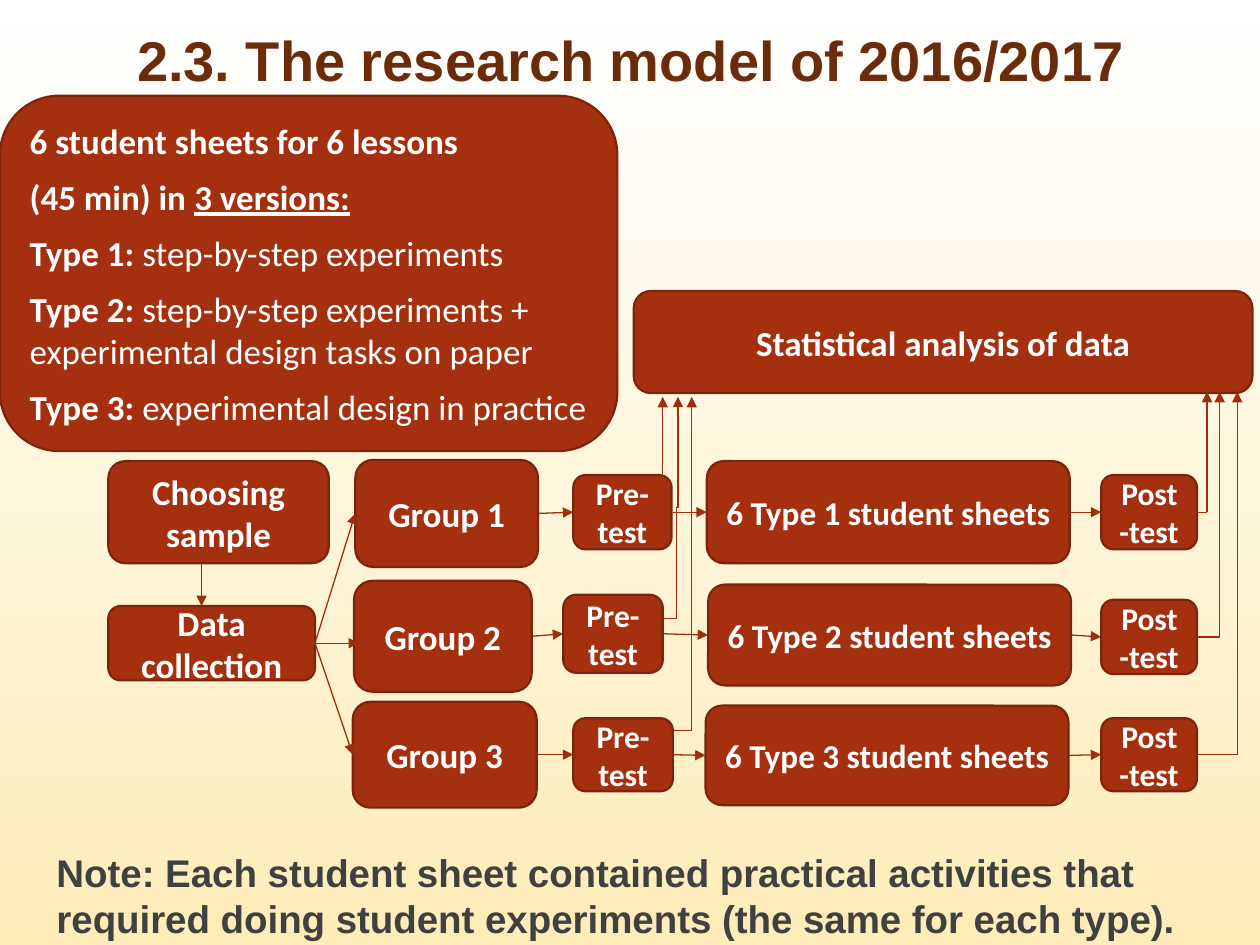
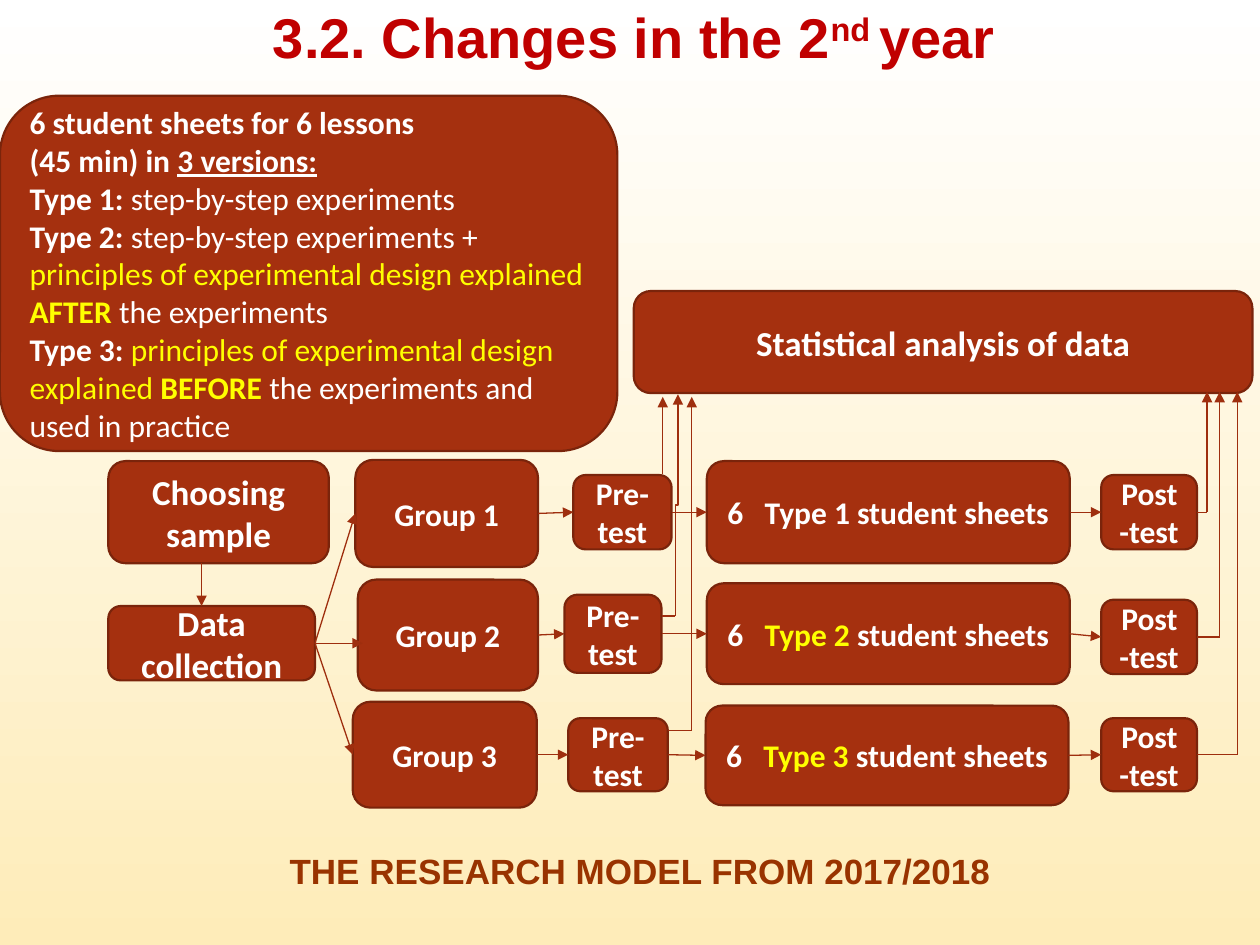
from dataclasses import dataclass

from pptx import Presentation
from pptx import util as u
from pptx.dml.color import RGBColor
from pptx.enum import shapes, text
from pptx.oxml import ns
from lxml import etree

COLOURS = {
    "sky": "FFFFFF", "sand": "FEECB9",
    "brick": "A5300F", "edge": "7A240B", "arrow": "9E2E0E",
    "white": "FFFFFF", "yellow": "FFFF00",
    "brown": "6A2C0B", "red": "C00000", "grey": "404040", "rust": "993300",
}
BOLD, PLAIN = {"bold": True}, {"bold": False}
YELLOW = {"colour": "yellow"}
LEFT, CENTRE = text.PP_ALIGN.LEFT, text.PP_ALIGN.CENTER


@dataclass
class Box:
    left: float
    top: float
    width: float
    height: float

    @property
    def right(self):
        return self.left + self.width

    @property
    def bottom(self):
        return self.top + self.height

    @property
    def middle(self):
        return self.top + self.height / 2

    def inside(self, left, top, width, height):
        return Box(self.left + left, self.top + top, width, height)

    def point(self, x, y):
        return self.left + x, self.top + y

    def inches(self):
        return [u.Inches(n) for n in (self.left, self.top, self.width, self.height)]


SUMMARY = Box(0, 0.76, 4.9, 2.82)
FLOW = Box(0.8, 2.3, 9.2, 4.2)


def rgb(name):
    return RGBColor.from_string(COLOURS[name])


def write(frame, paras, size, colour="white", font="Calibri", bold=True,
          align=LEFT, after=0):
    """Fill a frame; each para is a string or a list of (text, format) spans."""
    frame.word_wrap = True
    for number, spans in enumerate(paras):
        para = frame.paragraphs[0] if number == 0 else frame.add_paragraph()
        para.alignment = align
        para.space_after = u.Pt(after)
        for words, style in [(spans, {})] if isinstance(spans, str) else spans:
            span = para.add_run()
            span.text = words
            span.font.size = u.Pt(size)
            span.font.name = font
            span.font.bold = style.get("bold", bold)
            span.font.underline = style.get("underline", False)
            span.font.color.rgb = rgb(style.get("colour", colour))
            for name in ("baseline", "spc"):
                if name in style:
                    span._r.get_or_add_rPr().set(name, str(style[name]))


def add_text(page, box, paras, **style):
    frame = page.shapes.add_textbox(*box.inches()).text_frame
    write(frame, paras, font="Arial", **style)


def add_panel(page, box, paras, **style):
    panel = page.shapes.add_shape(shapes.MSO_SHAPE.ROUNDED_RECTANGLE, *box.inches())
    panel.shadow.inherit = False
    panel.fill.solid()
    panel.fill.fore_color.rgb = rgb("brick")
    panel.line.color.rgb = rgb("edge")
    panel.line.width = u.Pt(1.25)
    panel.text_frame.vertical_anchor = text.MSO_ANCHOR.MIDDLE
    write(panel.text_frame, paras, **style)


def add_line(page, start, end, head=True, kind=shapes.MSO_CONNECTOR.STRAIGHT):
    line = page.shapes.add_connector(kind, *[u.Inches(n) for n in (*start, *end)])
    line.line.color.rgb = rgb("arrow")
    line.line.width = u.Pt(0.75)
    if head:
        etree.SubElement(line.line._get_or_add_ln(), ns.qn("a:tailEnd"), type="triangle")
    etree.SubElement(line._element.spPr, ns.qn("a:effectLst"))
    return line


def add_upright_elbow(page, start, end):
    """Elbow that leaves and arrives vertically: a level one turned by 90 degrees."""
    middle_x, middle_y = (start[0] + end[0]) / 2, (start[1] + end[1]) / 2
    turned = [(middle_x + y - middle_y, middle_y - x + middle_x) for x, y in (start, end)]
    elbow = add_line(page, *turned, kind=shapes.MSO_CONNECTOR.ELBOW)
    elbow._element.spPr.find(ns.qn("a:xfrm")).set("rot", "5400000")


def draw_row(page, boxes, number, sheet_spans, group_size, sheet_size):
    contents = [([f"Group {number}"], group_size), (["Pre-test"], 18),
                ([sheet_spans], sheet_size), (["Post-test"], 18)]
    for box, (paras, size) in zip(boxes, contents):
        add_panel(page, box, paras, size=size, align=CENTRE)
    for before, following in zip(boxes, boxes[1:]):
        add_line(page, (before.right, before.middle), (following.left, following.middle))


def draw_sampling(page, area, groups):
    choosing = area.inside(0.06, 1.36, 1.75, 0.81)
    data = area.inside(0.06, 2.51, 1.64, 0.59)
    add_panel(page, choosing, ["Choosing sample"], size=20, align=CENTRE)
    add_panel(page, data, ["Data collection"], size=20, align=CENTRE)
    down = area.left + 0.8
    add_line(page, (down, choosing.bottom), (down, data.top))
    source = (data.right, data.middle)
    first, second, third = groups
    for end in ((first.left, first.middle), (second.left + 0.04, data.middle),
                (third.left, third.middle)):
        add_line(page, source, end)


def draw_risers(page, area, pre_tests, post_tests, elbow):
    """Arrows from the tests up to the statistics panel."""
    add_line(page, area.point(4.46, 1.46), area.point(4.46, 0.85))
    x, y, tip = elbow
    corner = area.point(x, y)
    add_line(page, (pre_tests[1].right, corner[1]), corner, head=False)
    add_upright_elbow(page, corner, area.point(4.58, tip))
    corner = area.point(4.69, 3.5)
    add_line(page, (pre_tests[2].right, corner[1]), corner, head=False)
    add_line(page, corner, area.point(4.69, 0.85))
    for post, x in zip(post_tests, (8.78, 8.88, 9.02)):
        corner = (area.left + x, post.middle)
        add_line(page, (post.right, post.middle), corner, head=False)
        add_line(page, corner, area.point(x, 0.81))


def draw_flow(page, area, second_row, third_pre_left, elbow, sheets, group_size, sheet_size):
    layout = [
        [(2.02, 1.35, 1.45, 0.85), (3.75, 1.47, 0.78, 0.59),
         (4.81, 1.36, 2.88, 0.81), (7.94, 1.47, 0.76, 0.59)],
        [*second_row, (7.94, 2.46, 0.76, 0.59)],
        [(2, 3.27, 1.46, 0.84), (third_pre_left, 3.4, 0.79, 0.58),
         (4.8, 3.3, 2.88, 0.79), (7.94, 3.4, 0.76, 0.58)],
    ]
    rows = [[area.inside(*place) for place in row] for row in layout]
    groups, pre_tests, _, post_tests = zip(*rows)
    add_panel(page, area.inside(4.23, 0.01, 4.91, 0.81), ["Statistical analysis of data"],
              size=20, align=CENTRE)
    for number, (boxes, spans) in enumerate(zip(rows, sheets), 1):
        draw_row(page, boxes, number, spans, group_size, sheet_size)
    draw_sampling(page, area, groups)
    draw_risers(page, area, pre_tests, post_tests, elbow)


def add_page(deck):
    page = deck.slides.add_slide(deck.slide_layouts[6])
    fill = page.background.fill
    fill.gradient()
    fill.gradient_angle = 270
    for stop, name in zip(fill.gradient_stops, ("sky", "sand")):
        stop.color.rgb = rgb(name)
    return page


def summary_paras(type_2, type_3):
    return [
        "6 student sheets for 6 lessons",
        [("(45 min) in ", {}), ("3 versions:", {"underline": True})],
        [("Type 1: ", BOLD), ("step-by-step experiments", PLAIN)],
        [("Type 2: ", BOLD), ("step-by-step experiments + ", PLAIN), *type_2],
        [("Type 3: ", BOLD), *type_3],
    ]


def build_first_year(deck):
    page = add_page(deck)
    add_text(page, Box(0.99, 0.15, 8.2, 0.6), ["2.3. The research model of 2016/2017"],
             size=32, colour="brown")
    add_panel(page, SUMMARY, summary_paras(
        [("experimental design tasks on paper", PLAIN)],
        [("experimental design in practice", PLAIN)]), size=20, after=8)
    draw_flow(page, FLOW,
              second_row=[(2.01, 2.31, 1.41, 0.88), (3.67, 2.42, 0.79, 0.62),
                          (4.82, 2.34, 2.88, 0.8)],
              third_pre_left=3.75, elbow=(4.57, 2.61, 0.85),
              sheets=[f"6 Type {n} student sheets" for n in (1, 2, 3)],
              group_size=20, sheet_size=19)
    add_text(page, Box(0.35, 6.69, 9.46, 0.84),
             ["Note: Each student sheet contained practical activities that required "
              "doing student experiments (the same for each type)."],
             size=22, colour="grey")


def build_second_year(deck):
    page = add_page(deck)
    add_text(page, Box(0.19, -0.03, 9.68, 0.6),
             [[("3.2. Changes in the 2", {}), ("nd ", {"baseline": 30000}), ("year", {})]],
             size=32, colour="red", align=CENTRE)
    principles = ("principles of experimental design explained ", PLAIN | YELLOW)
    add_panel(page, SUMMARY, summary_paras(
        [principles, ("AFTER ", YELLOW), ("the experiments", PLAIN)],
        [principles, ("BEFORE ", YELLOW),
         ("the experiments and used in practice", PLAIN)]), size=18)
    sheets = [[("6", {}), (" ", {"spc": 810}), (f"Type {n} ", style), ("student sheets", {})]
              for n, style in ((1, {}), (2, YELLOW), (3, YELLOW))]
    draw_flow(page, FLOW,
              second_row=[(2.04, 2.3, 1.43, 0.88), (3.68, 2.42, 0.77, 0.62),
                          (4.81, 2.33, 2.88, 0.8)],
              third_pre_left=3.71, elbow=(4.56, 2.59, 0.83),
              sheets=sheets, group_size=18, sheet_size=18)
    add_text(page, Box(0.35, 6.69, 9.46, 0.44), ["THE RESEARCH MODEL FROM 2017/2018"],
             size=20, colour="rust", align=CENTRE)


def main():
    deck = Presentation()
    deck.slide_width, deck.slide_height = u.Inches(10), u.Inches(7.5)
    build_first_year(deck)
    build_second_year(deck)
    deck.save("out.pptx")


if __name__ == "__main__":
    main()
